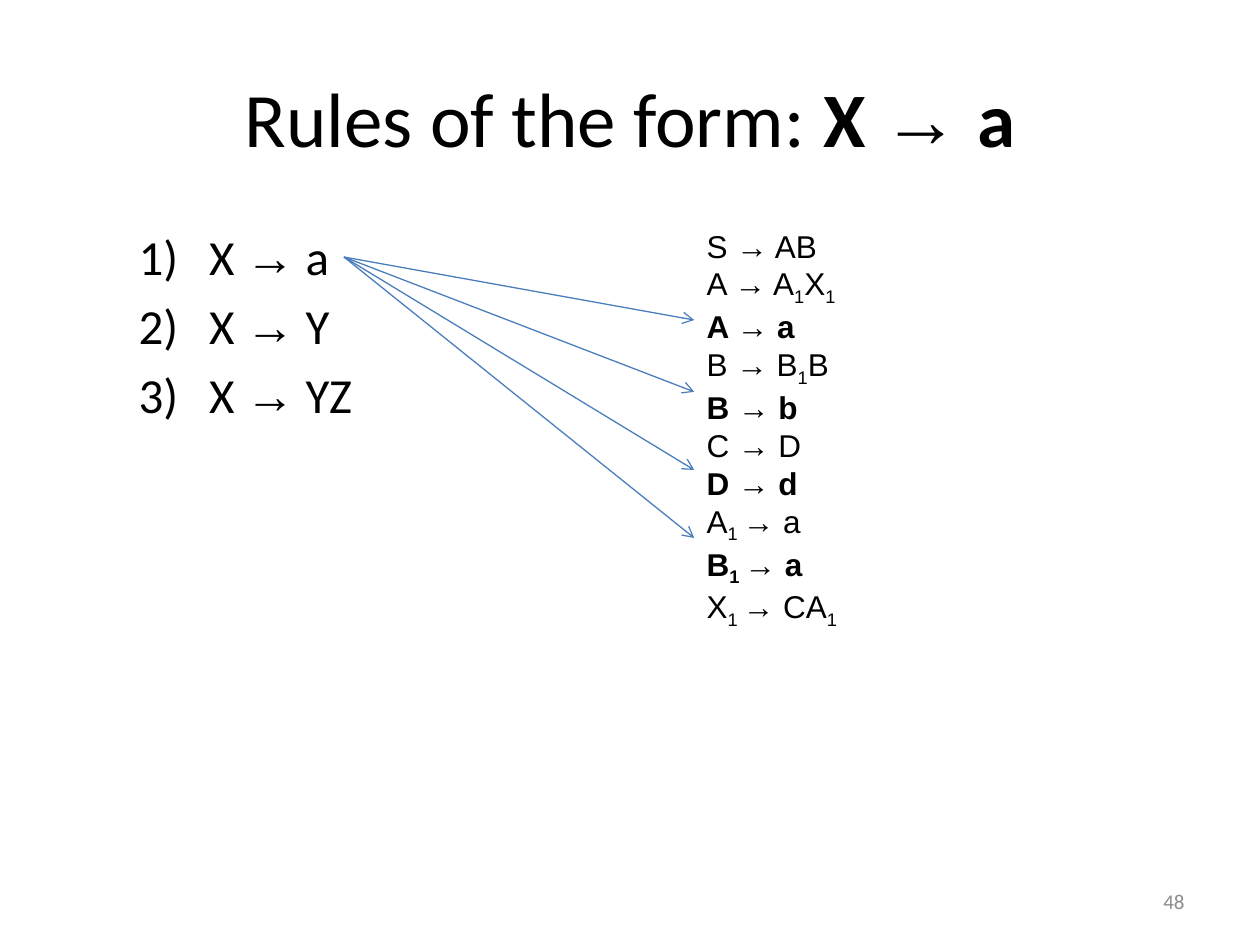
from lxml.etree import SubElement
from pptx import Presentation
from pptx.dml.color import RGBColor
from pptx.enum.shapes import MSO_CONNECTOR
from pptx.enum.text import MSO_ANCHOR, MSO_AUTO_SIZE, PP_ALIGN
from pptx.oxml.ns import qn
from pptx.util import Inches, Pt

BLACK = RGBColor(0x00, 0x00, 0x00)
GRAY = RGBColor(0x8C, 0x8C, 0x8C)
BLUE = RGBColor(0x4B, 0x7E, 0xBC)

deck = Presentation()
deck.slide_width, deck.slide_height = Inches(10), Inches(7.5)
COLUMN = deck.slide_width / 20
ROW = deck.slide_height / 30


def place(shape, column, row, columns, rows):
    shape.left, shape.top = round(column * COLUMN), round(row * ROW)
    shape.width, shape.height = round(columns * COLUMN), round(rows * ROW)


def add_span(para, text, font, size, bold=False, color=BLACK):
    span = para.add_run()
    span.text = text
    span.font.name = font
    span.font.size = Pt(size)
    span.font.bold = bold
    span.font.color.rgb = color
    return span


page = deck.slides.add_slide(deck.slide_layouts[1])

title = page.shapes.title
place(title, 1, 1.2, 18, 5)
title.text_frame.vertical_anchor = MSO_ANCHOR.MIDDLE
heading = title.text_frame.paragraphs[0]
heading.alignment = PP_ALIGN.CENTER
add_span(heading, "Rules of the form: ", "Calibri", 44)
for text, font in [("X ", "Calibri"), ("→", "Arial"), (" a", "Calibri")]:
    add_span(heading, text, font, 44, bold=True)

forms = page.placeholders[1]
place(forms, 1, 7, 5.46, 7.84)
forms.text_frame.auto_size = MSO_AUTO_SIZE.NONE
for index, result in enumerate(["a", "Y", "YZ"]):
    para = forms.text_frame.paragraphs[0] if index == 0 else forms.text_frame.add_paragraph()
    para.level = 1
    properties = para._p.get_or_add_pPr()
    properties.set("marL", str(Inches(1.06)))
    properties.set("indent", str(Inches(-0.56)))
    SubElement(properties, qn("a:buFont"), typeface="+mj-lt")
    SubElement(properties, qn("a:buAutoNum"), type="arabicParenR")
    for text, font in [("X ", "Calibri"), ("→", "Arial"), (f" {result}", "Calibri")]:
        add_span(para, text, font, 28)

number = page.shapes.add_textbox(0, 0, 0, 0)
place(number, 14.34, 27.8, 4.66, 1.6)
number.text_frame.word_wrap = True
number.text_frame.vertical_anchor = MSO_ANCHOR.MIDDLE
number.text_frame.paragraphs[0].alignment = PP_ALIGN.RIGHT
add_span(number.text_frame.paragraphs[0], "48", "Calibri", 12, color=GRAY)

RULES = [
    ("S → AB", False),
    ("A → A|1|X|1", False),
    ("A → a", True),
    ("B → B|1|B", False),
    ("B → b", True),
    ("C → D", False),
    ("D → d", True),
    ("A|1 |→ a", False),
    ("B|1 |→ a", True),
    ("X|1 |→ CA|1", False),
]
grammar = page.shapes.add_textbox(0, 0, 0, 0)
place(grammar, 11.02, 7, 2.62, 12.52)
grammar.text_frame.word_wrap = False
grammar.text_frame.auto_size = MSO_AUTO_SIZE.SHAPE_TO_FIT_TEXT
for index, (rule, bold) in enumerate(RULES):
    para = grammar.text_frame.paragraphs[0] if index == 0 else grammar.text_frame.add_paragraph()
    for position, text in enumerate(rule.split("|")):
        span = add_span(para, text, "Arial", 18, bold)
        if position % 2:
            span._r.get_or_add_rPr().set("baseline", "-25000")

for end_row in [10.16, 12.44, 14.92, 17.08]:
    arrow = page.shapes.add_connector(
        MSO_CONNECTOR.STRAIGHT,
        round(5.46 * COLUMN), round(8.16 * ROW),
        round(11.02 * COLUMN), round(end_row * ROW),
    )
    arrow.line.color.rgb = BLUE
    arrow.line.width = Pt(0.75)
    SubElement(arrow.line._get_or_add_ln(), qn("a:tailEnd"), type="arrow")
    SubElement(arrow._element.spPr, qn("a:effectLst"))

deck.save("out.pptx")
